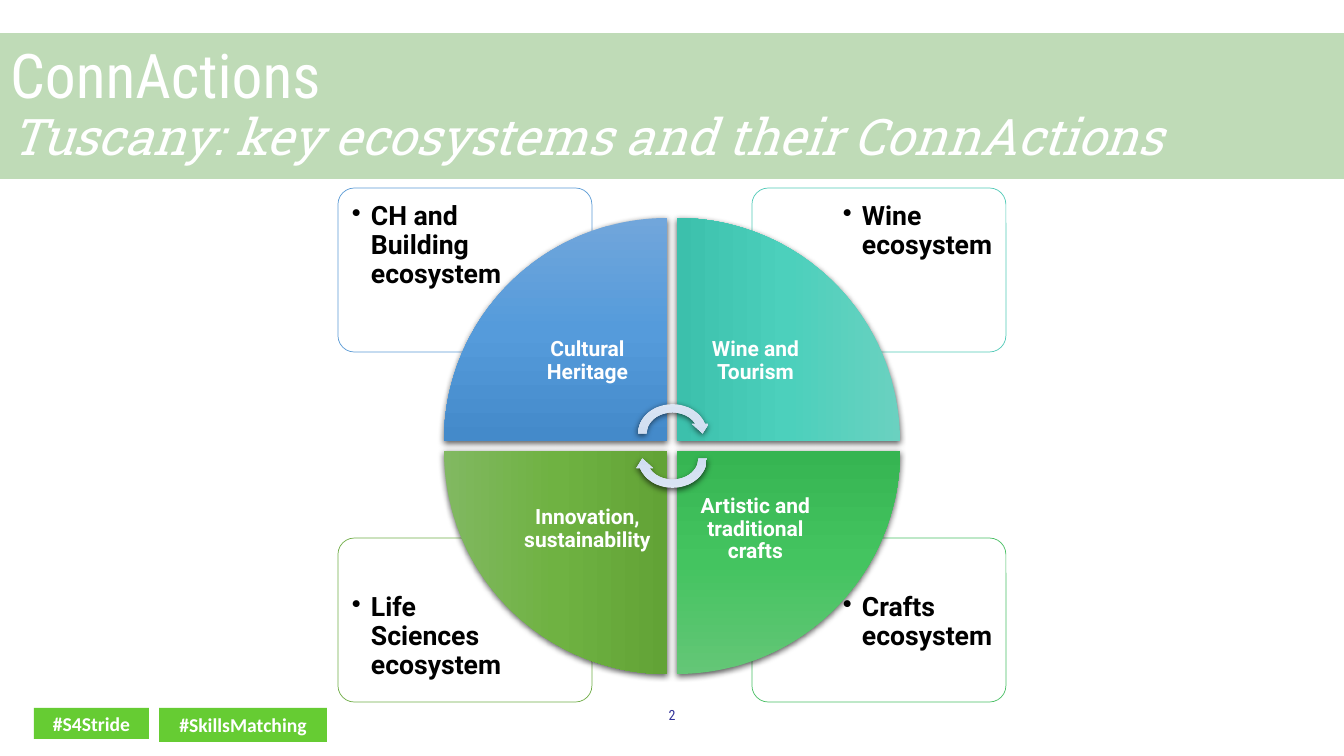
from lxml.etree import SubElement
from pptx import Presentation
from pptx.dml.color import RGBColor
from pptx.enum.shapes import MSO_SHAPE
from pptx.enum.text import MSO_ANCHOR, MSO_AUTO_SIZE, PP_ALIGN
from pptx.oxml.ns import qn
from pptx.util import Pt

PX = 914400 / 100.8
WHITE = "FFFFFF"
THEME = {
    "band": "97C58A",
    "tag_fill": "66CC33",
    "arrow": ("DBE5F3", "D0DEF1", "B6C5D9"),
    "shadow": "000000",
    "heading": {"name": "Roboto Condensed", "size": 44, "color": WHITE},
    "subheading": {"name": "Roboto Slab", "size": 36, "color": WHITE, "italic": True},
    "tag": {"name": "Calibri", "size": 14, "color": WHITE, "bold": True},
    "number": {"name": "Roboto Condensed", "size": 10, "color": "333399"},
    "note": {"name": "Roboto", "size": 19, "color": "000000", "bold": True},
    "label": {"name": "Roboto", "size": 15, "color": WHITE, "bold": True},
}


def px(*lengths):
    return [round(length * PX) for length in lengths]


def write(shape, text, style, align=PP_ALIGN.CENTER, anchor=MSO_ANCHOR.MIDDLE, margin=5, spacing=1.0):
    frame = shape.text_frame
    margins = ("margin_left", "margin_top", "margin_right", "margin_bottom")
    for side, length in zip(margins, px(*[margin] * 4)):
        setattr(frame, side, length)
    frame.word_wrap = True
    frame.auto_size = MSO_AUTO_SIZE.NONE
    frame.vertical_anchor = anchor
    paragraph = frame.paragraphs[0]
    paragraph.alignment = align
    paragraph.line_spacing = spacing
    run = paragraph.add_run()
    run.text = text
    for key, value in THEME[style].items():
        if key == "color":
            run.font.color.rgb = RGBColor.from_string(value)
        else:
            setattr(run.font, key, Pt(value) if key == "size" else value)
    return paragraph


prs = Presentation()
prs.slide_width, prs.slide_height = px(1344, 756)
slide = prs.slides.add_slide(prs.slide_layouts[5])
shapes = slide.shapes

title = shapes.title
title.left, title.top, title.width, title.height = px(0, 33, 1344, 146)
title.fill.solid()
title.fill.fore_color.rgb = RGBColor.from_string(THEME["band"])
heading = write(title, "ConnActions", "heading", PP_ALIGN.LEFT, margin=10, spacing=0.9)
heading.add_line_break()
write(title, "Tuscany: key ecosystems and their ConnActions", "subheading", PP_ALIGN.LEFT, margin=10, spacing=0.9)
translucent = [(title, 61)]

for hashtag, box in (("#S4Stride", (34, 708, 115, 31)), ("#SkillsMatching", (159, 708, 168, 34))):
    tag = shapes.add_shape(MSO_SHAPE.RECTANGLE, *px(*box))
    tag.shadow.inherit = False
    tag.fill.solid()
    tag.fill.fore_color.rgb = RGBColor.from_string(THEME["tag_fill"])
    tag.line.fill.background()
    write(tag, hashtag, "tag")

write(shapes.add_textbox(*px(521, 695, 302, 40)), "2", "number")

LEFT = {"panel": 338, "note": 342, "wedge": 444, "label": 509}
RIGHT = {"panel": 752, "note": 833, "wedge": 677, "label": 677}
TOP = {"panel": 188, "note": 193, "wedge": 218, "label": 283}
BOTTOM = {"panel": 538, "note": 584, "wedge": 451, "label": 451}
quadrants = [
    (LEFT, TOP, "Cultural Heritage", "CH and Building ecosystem", "5B9BD5", ("71A6DB", "559BDB", "448ACA")),
    (RIGHT, TOP, "Wine and Tourism", "Wine ecosystem", "52CAB8", ("6AD1C0", "4CD0BC", "3CC0AC")),
    (RIGHT, BOTTOM, "Artistic and traditional crafts", "Crafts ecosystem", "49BF64", ("64C677", "44C460", "36B552")),
    (LEFT, BOTTOM, "Innovation, sustainability", "Life Sciences ecosystem", "70AD47", ("81B861", "6FB242", "62A336")),
]

for column, row, theme_name, ecosystem, outline, shades in quadrants:
    panel = shapes.add_shape(MSO_SHAPE.ROUNDED_RECTANGLE, *px(column["panel"], row["panel"], 254, 164))
    panel.adjustments[0] = 0.1
    panel.shadow.inherit = False
    panel.fill.solid()
    panel.fill.fore_color.rgb = RGBColor.from_string(WHITE)
    panel.line.color.rgb = RGBColor.from_string(outline)
    panel.line.width = Pt(0.5)
    translucent.append((panel, 90))

    note = shapes.add_textbox(*px(column["note"], row["note"], 170, 116))
    bullet = write(note, ecosystem, "note", PP_ALIGN.LEFT, MSO_ANCHOR.TOP, 10, 0.9)
    properties = bullet._p.get_or_add_pPr()
    indent = px(19)[0]
    properties.set("marL", str(indent))
    properties.set("indent", str(-indent))
    SubElement(properties, qn("a:buChar"), char="•")

dial = [
    (MSO_SHAPE.PIE_WEDGE, (column["wedge"], row["wedge"], 223, 223), 90 * turn, shades)
    for turn, (column, row, _, _, _, shades) in enumerate(quadrants)
]
dial += [
    (MSO_SHAPE.CIRCULAR_ARROW, (634, top, 77, 67), rotation, THEME["arrow"])
    for top, rotation in ((400, 0), (425, 180))
]
for kind, box, rotation, shades in dial:
    part = shapes.add_shape(kind, *px(*box))
    part.rotation = rotation
    part.line.fill.background()
    part.fill.gradient()
    part.fill.gradient_angle = 270
    stops = part._element.spPr.find(qn("a:gradFill")).find(qn("a:gsLst"))
    for stop in list(stops):
        stops.remove(stop)
    for position, shade in zip((0, 50000, 100000), shades):
        stop = SubElement(stops, qn("a:gs"), pos=str(position))
        SubElement(stop, qn("a:srgbClr"), val=shade)
    part.shadow.inherit = False
    effects = part._element.spPr.find(qn("a:effectLst"))
    cast = SubElement(effects, qn("a:outerShdw"), blurRad=str(Pt(4.5)), dist=str(Pt(1.5)), dir="5400000", rotWithShape="0")
    shadow_color = SubElement(cast, qn("a:srgbClr"), val=THEME["shadow"])
    SubElement(shadow_color, qn("a:alpha"), val="63000")

for column, row, theme_name, _, _, _ in quadrants:
    label = shapes.add_textbox(*px(column["label"], row["label"], 157, 157))
    write(label, theme_name, "label", margin=12, spacing=0.9)

for shape, opacity in translucent:
    color = shape._element.spPr.find(qn("a:solidFill")).find(qn("a:srgbClr"))
    SubElement(color, qn("a:alpha"), val=str(opacity * 1000))

prs.save("out.pptx")
